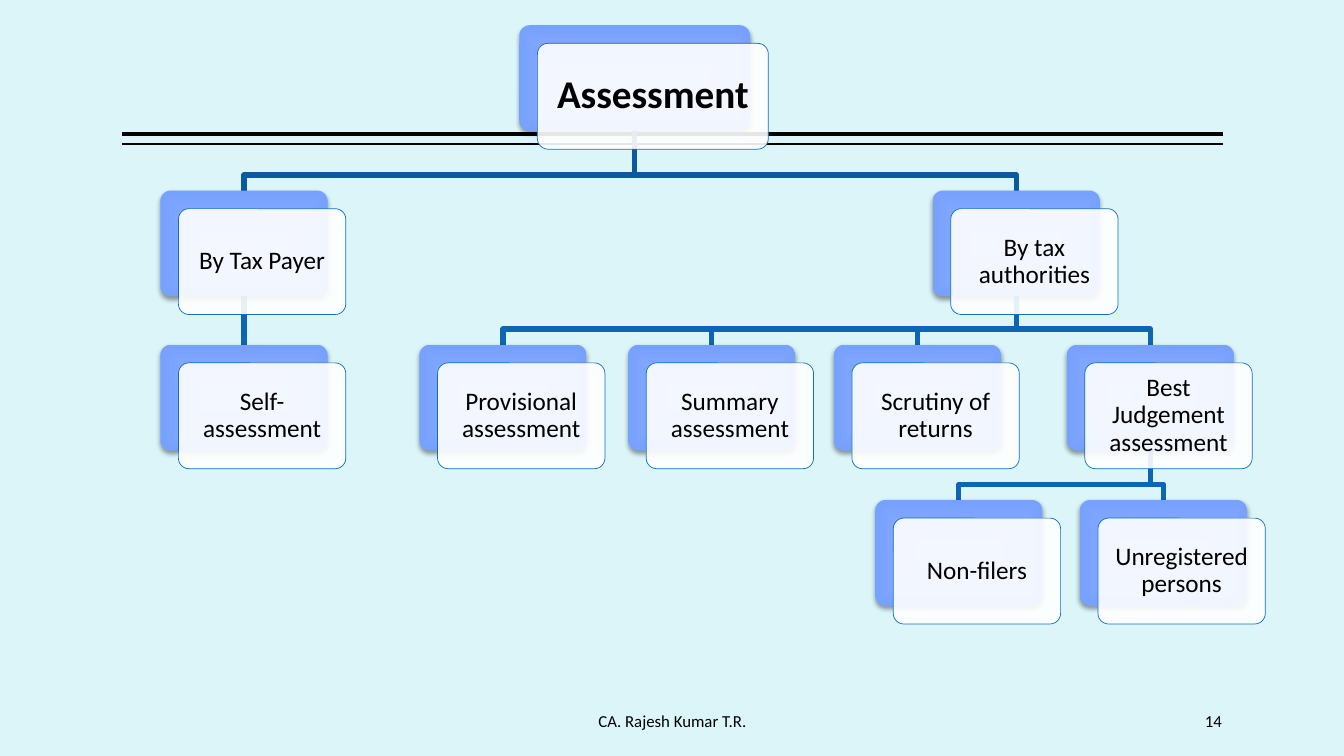
"""Build the assessment hierarchy slide."""
from pptx import Presentation
from pptx import util as u
from pptx.dml.color import RGBColor
from pptx.enum import shapes, text
from pptx.oxml import parse_xml
from pptx.oxml.ns import nsdecls, qn


def color(hex_string):
    """Return the colour for a hex string."""
    return RGBColor.from_string(hex_string)


def write(shape, words, size, align, inset_x, inset_y, bold=False):
    """Put one styled paragraph in a shape."""
    frame = shape.text_frame
    frame.word_wrap = True
    frame.vertical_anchor = text.MSO_ANCHOR.MIDDLE
    frame.margin_left = frame.margin_right = u.Inches(inset_x)
    frame.margin_top = frame.margin_bottom = u.Inches(inset_y)
    paragraph = frame.paragraphs[0]
    paragraph.alignment = align
    run = paragraph.add_run()
    run.text = words
    run.font.name = "Calibri"
    run.font.size = u.Pt(size)
    run.font.bold = bold
    run.font.color.rgb = color("000000")
    return paragraph


presentation = Presentation()
presentation.slide_width = u.Inches(13.33)
presentation.slide_height = u.Inches(7.5)
slide = presentation.slides.add_slide(presentation.slide_layouts[6])
slide.background.fill.solid()
slide.background.fill.fore_color.rgb = color("DBF5F9")

for rule_top, rule_width in [(1.33, 3), (1.43, 1)]:
    rule = slide.shapes.add_connector(
        shapes.MSO_CONNECTOR.STRAIGHT,
        u.Inches(12.13), u.Inches(rule_top), u.Inches(1.21), u.Inches(rule_top))
    rule.line.color.rgb = color("000000")
    rule.line.width = u.Pt(rule_width)
    rule._element.spPr.append(parse_xml(f"<a:effectLst {nsdecls('a')}/>"))

ROW_TOPS = [0.25, 1.89, 3.42, 4.96]
BOX_HEIGHT = 1.05
OFFSET_X, OFFSET_Y = 0.18, 0.18
ROOT_WIDTH, BOX_WIDTH = 2.29, 1.66
ELBOW_RISE = 0.155

boxes = [
    ("Assessment", 5.15, 0, None),
    ("By Tax Payer", 1.59, 1, "Assessment"),
    ("Self-assessment", 1.59, 2, "By Tax Payer"),
    ("By tax authorities", 9.25, 1, "Assessment"),
    ("Provisional assessment", 4.16, 2, "By tax authorities"),
    ("Summary assessment", 6.23, 2, "By tax authorities"),
    ("Scrutiny of returns", 8.27, 2, "By tax authorities"),
    ("Best Judgement assessment", 10.58, 2, "By tax authorities"),
    ("Non-filers", 8.68, 3, "Best Judgement assessment"),
    ("Unregistered persons", 10.71, 3, "Best Judgement assessment"),
]
widths = {label: BOX_WIDTH if parent else ROOT_WIDTH for label, left, row, parent in boxes}
centers = {label: left + widths[label] / 2 for label, left, row, parent in boxes}
bottoms = {label: ROW_TOPS[row] + BOX_HEIGHT for label, left, row, parent in boxes}

straight_links = []
for label, left, row, parent in boxes:
    if parent is None:
        continue
    start_x, start_y = u.Inches(centers[parent]), u.Inches(bottoms[parent])
    end_x, end_y = u.Inches(centers[label]), u.Inches(ROW_TOPS[row])
    if start_x == end_x:
        link = slide.shapes.add_connector(
            shapes.MSO_CONNECTOR.STRAIGHT, start_x, start_y, end_x, end_y)
        link._element.spPr.append(parse_xml(f"<a:effectLst {nsdecls('a')}/>"))
        straight_links.append((link, parent, label))
    else:
        elbow_y = end_y - u.Inches(ELBOW_RISE)
        builder = slide.shapes.build_freeform(start_x, start_y)
        builder.add_line_segments(
            [(start_x, elbow_y), (end_x, elbow_y), (end_x, end_y)], close=False)
        link = builder.convert_to_shape()
        link.fill.background()
        link.shadow.inherit = False
    link.line.color.rgb = color("0C599F" if row == 1 else "0E65B4")
    link.line.width = u.Pt(3.78)

back_boxes = {}
for label, left, row, parent in boxes:
    size = u.Inches(widths[label]), u.Inches(BOX_HEIGHT)
    back, front = [
        slide.shapes.add_shape(
            shapes.MSO_SHAPE.ROUNDED_RECTANGLE,
            u.Inches(left + layer * OFFSET_X), u.Inches(ROW_TOPS[row] + layer * OFFSET_Y), *size)
        for layer in range(2)]
    for shape in (back, front):
        shape.adjustments[0] = 0.1
        shape.shadow.inherit = False
    back_boxes[label] = back

    back.line.fill.background()
    back.fill.gradient()
    for stop, stop_color in zip(back.fill.gradient_stops, ["90B1FF", "77A1FF"]):
        stop.color.rgb = color(stop_color)
    properties = back._element.spPr
    gradient = properties.find(qn("a:gradFill"))
    gradient.replace(gradient.find(qn("a:lin")), parse_xml(
        f'<a:path {nsdecls("a")} path="rect">'
        '<a:fillToRect l="50000" t="50000" r="50000" b="50000"/></a:path>'))
    properties.find(qn("a:effectLst")).append(parse_xml(
        f'<a:outerShdw {nsdecls("a")} blurRad="{u.Pt(3.5)}" dist="{u.Pt(2)}" dir="5400000" '
        'rotWithShape="0"><a:srgbClr val="000000"><a:alpha val="38000"/></a:srgbClr>'
        '</a:outerShdw>'))

    front.fill.solid()
    front.fill.fore_color.rgb = color("FFFFFF")
    front._element.spPr.find(qn("a:solidFill"))[0].append(
        parse_xml(f'<a:alpha {nsdecls("a")} val="90000"/>'))
    front.line.color.rgb = color("0F6FC6")
    front.line.width = u.Pt(0.5)
    font_size, inset = (18, 0.1) if parent else (28, 0.15)
    paragraph = write(front, label, font_size, text.PP_ALIGN.CENTER, inset, inset, not parent)
    paragraph.line_spacing = 0.9

for link, parent, label in straight_links:
    link.begin_connect(back_boxes[parent], 2)
    link.end_connect(back_boxes[label], 0)

for words, left, width, align in [
    ("CA. Rajesh Kumar T.R.", 3.21, 6.92, text.PP_ALIGN.CENTER),
    ("14", 10.12, 2, text.PP_ALIGN.RIGHT),
]:
    footer = slide.shapes.add_textbox(
        u.Inches(left), u.Inches(6.95), u.Inches(width), u.Inches(0.4))
    write(footer, words, 12, align, 0, 0.05)

presentation.save("out.pptx")
